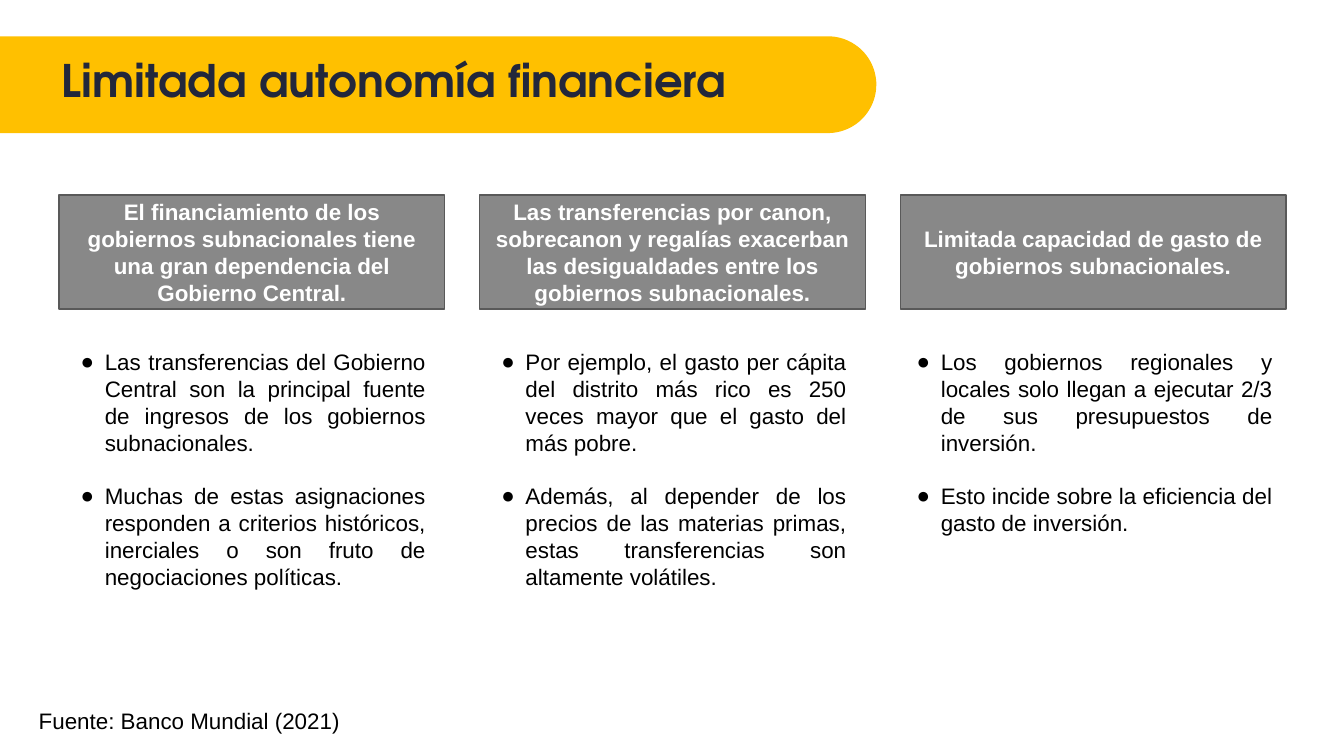
from lxml import etree
from pptx import Presentation
from pptx.dml.color import RGBColor
from pptx.enum.shapes import MSO_SHAPE
from pptx.enum.text import MSO_ANCHOR, MSO_AUTO_SIZE, PP_ALIGN
from pptx.oxml.ns import qn
from pptx.util import Inches, Pt

COLUMNS = [
    ("El financiamiento de los gobiernos subnacionales tiene una gran dependencia del Gobierno Central.",
     ["Las transferencias del Gobierno Central son la principal fuente de ingresos de los gobiernos subnacionales.",
      "Muchas de estas asignaciones responden a criterios históricos, inerciales o son fruto de negociaciones políticas."],
     0.04),
    ("Las transferencias por canon, sobrecanon y regalías exacerban las desigualdades entre los gobiernos subnacionales.",
     ["Por ejemplo, el gasto per cápita del distrito más rico es 250 veces mayor que el gasto del más pobre.",
      "Además, al depender de los precios de las materias primas, estas transferencias son altamente volátiles."],
     0.04),
    ("Limitada capacidad de gasto de gobiernos subnacionales.",
     ["Los gobiernos regionales y locales solo llegan a ejecutar 2/3 de sus presupuestos de inversión.",
      "Esto incide sobre la eficiencia del gasto de inversión."],
     0),
]


def color(value):
    return RGBColor.from_string(value)


def place(sp, x, y, w, h):
    sp.left, sp.top, sp.width, sp.height = (Inches(v) for v in (x, y, w, h))


def set_frame(tf, anchor, margin=0.1, top=None):
    tf.word_wrap = True
    tf.auto_size = MSO_AUTO_SIZE.NONE
    tf.vertical_anchor = anchor
    tf.margin_left = tf.margin_right = Inches(0.1)
    tf.margin_bottom = Inches(margin)
    tf.margin_top = Inches(margin if top is None else top)


def style(p, align, size=12, name="Arial", rgb="000000", bold=False):
    p.alignment = align
    for r in p.runs:
        r.font.size = Pt(size)
        r.font.name = name
        r.font.bold = bold
        r.font.color.rgb = color(rgb)


def add_bullet(p):
    pPr = p._p.get_or_add_pPr()
    pPr.set("marL", str(Inches(0.2)))
    pPr.set("indent", str(Inches(-0.18)))
    clr = etree.SubElement(pPr, qn("a:buClr"))
    etree.SubElement(clr, qn("a:srgbClr"), val="000000")
    etree.SubElement(pPr, qn("a:buFont"), typeface="Arial")
    etree.SubElement(pPr, qn("a:buChar"), char="●")


def add_title(slide, x, y, w, h):
    bar = slide.shapes.add_shape(
        MSO_SHAPE.ROUND_2_SAME_RECTANGLE, 0, 0, Inches(h), Inches(w))
    place(bar, x + (w - h) / 2, y + (h - w) / 2, h, w)
    bar.rotation = 90
    bar.adjustments[0] = 0.5
    bar.adjustments[1] = 0
    bar.shadow.inherit = False
    bar.fill.solid()
    bar.fill.fore_color.rgb = color("FFC000")
    bar.line.fill.background()
    slide.shapes._spTree.insert(2, bar._element)

    title = slide.shapes.title
    place(title, x + 0.36, y - 0.2, 7.85, 1.1)
    tf = title.text_frame
    tf.text = "Limitada autonomía financiera"
    set_frame(tf, MSO_ANCHOR.MIDDLE, 0.05)
    p = tf.paragraphs[0]
    p.line_spacing = 0.9
    style(p, PP_ALIGN.LEFT, 24, "TeX Gyre Adventor", "22273B", True)


def add_column(slide, body, heading, items, inset, x, y, w):
    box = slide.shapes.add_shape(
        MSO_SHAPE.RECTANGLE, Inches(x), Inches(y), Inches(w), Inches(0.85))
    box.shadow.inherit = False
    box.fill.solid()
    box.fill.fore_color.rgb = color("888888")
    box.line.color.rgb = color("595959")
    box.line.width = Pt(0.75)
    box.text_frame.text = heading
    set_frame(box.text_frame, MSO_ANCHOR.MIDDLE)
    style(box.text_frame.paragraphs[0], PP_ALIGN.CENTER, rgb="FFFFFF", bold=True)

    place(body, x + inset, y + 0.84, w - 2 * inset, 2.22)
    tf = body.text_frame
    tf.text = "\n".join(items)
    set_frame(tf, MSO_ANCHOR.TOP, top=0.3)
    for i, p in enumerate(tf.paragraphs):
        add_bullet(p)
        p.space_before = Pt(14.4 if i else 0)
        style(p, PP_ALIGN.JUSTIFY)


def add_source(slide, x, y, w, h):
    tf = slide.shapes.add_textbox(
        Inches(x), Inches(y), Inches(w), Inches(h)).text_frame
    tf.text = "Fuente: Banco Mundial (2021)"
    set_frame(tf, MSO_ANCHOR.TOP)
    style(tf.paragraphs[0], PP_ALIGN.LEFT)


def main():
    prs = Presentation()
    prs.slide_width, prs.slide_height = Inches(10), Inches(10 * 9 / 16)
    slide = prs.slides.add_slide(prs.slide_layouts.get_by_name("Comparison"))
    add_title(slide, 0, 0.27, 6.52, 0.72)
    bodies = list(slide.placeholders)[1:]
    for i, (body, column) in enumerate(zip(bodies, COLUMNS)):
        add_column(slide, body, *column, 0.44 + 3.13 * i, 1.45, 2.87)
    for body in bodies[len(COLUMNS):]:
        body._element.getparent().remove(body._element)
    add_source(slide, 0.19, 5.16, 5.04, 0.4)
    prs.save("out.pptx")


if __name__ == "__main__":
    main()
